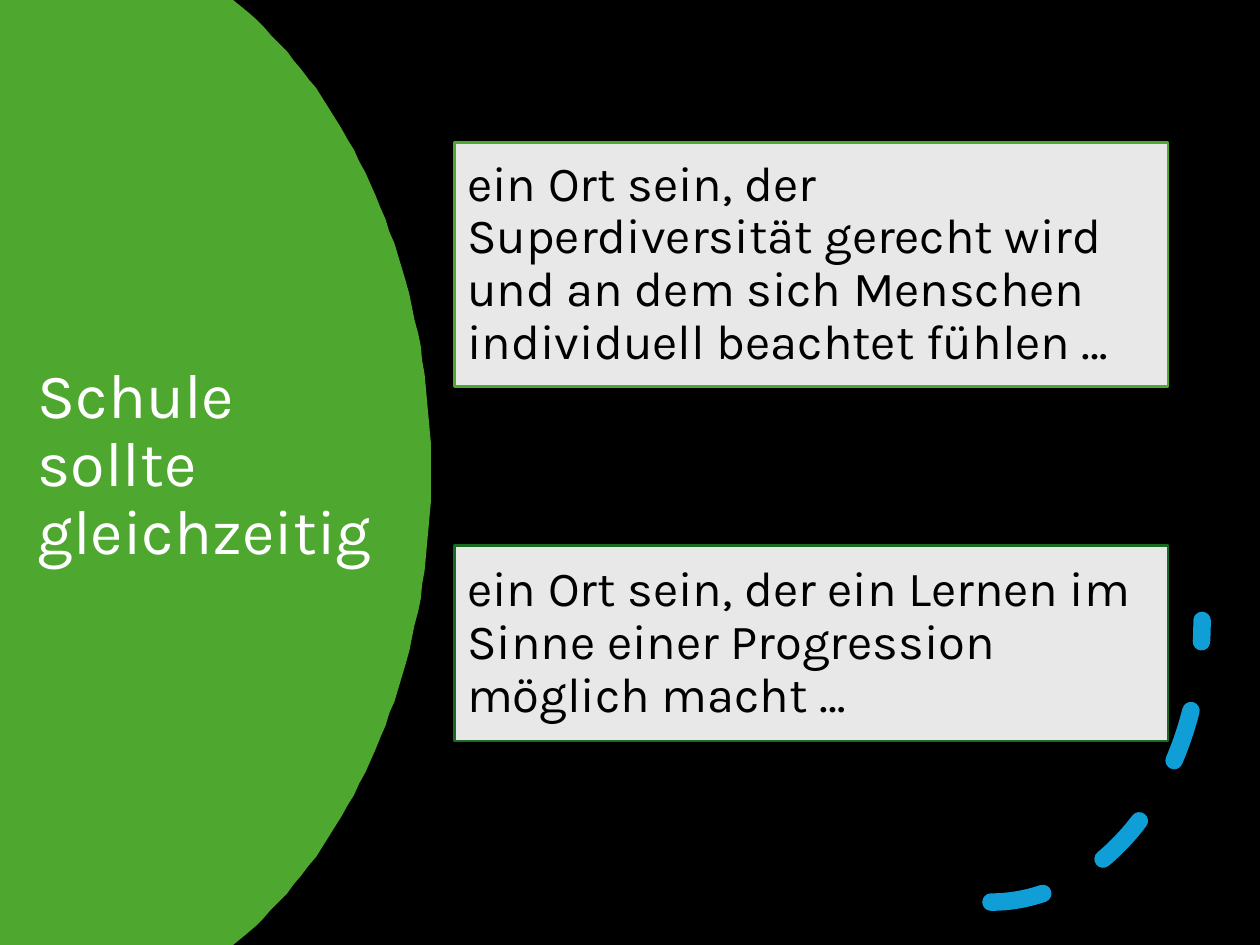
from dataclasses import dataclass

from lxml import etree
from pptx import Presentation
from pptx.dml.color import RGBColor
from pptx.enum.dml import MSO_LINE
from pptx.enum.shapes import MSO_SHAPE
from pptx.enum.text import MSO_ANCHOR, PP_ALIGN
from pptx.util import Pt

RECT, ARC = MSO_SHAPE.RECTANGLE, MSO_SHAPE.ARC
MIDDLE, LEFT, DASH = MSO_ANCHOR.MIDDLE, PP_ALIGN.LEFT, MSO_LINE.DASH

PX = 9144  # 100 px to the inch
FONT = "Karla"
COLORS = {
    "black": "000000",
    "white": "FFFFFF",
    "green": "4EA72E",
    "dark_green": "196B24",
    "gray": "E8E8E8",
    "blue": "0F9ED5",
}


@dataclass
class Card:
    top: int
    height: int
    border: str
    text: str


CARDS = [
    Card(113, 194, "green",
         "ein Ort sein, der Superdiversität gerecht wird und an dem sich "
         "Menschen individuell beachtet fühlen …"),
    Card(433, 155, "dark_green",
         "ein Ort sein, der ein Lernen im Sinne einer Progression möglich macht …"),
]

Point = tuple[float, float]


def px(*values: int) -> list[int]:
    return [v * PX for v in values]


def rgb(name: str) -> RGBColor:
    return RGBColor.from_string(COLORS[name])


def paint(fill, color: str) -> None:
    fill.solid()
    fill.fore_color.rgb = rgb(color)


def bezier(p0: Point, p1: Point, p2: Point, p3: Point, steps: int = 40) -> list[Point]:
    """Points along a cubic curve, without its start."""
    points = []
    for i in range(1, steps + 1):
        t = i / steps
        u = 1 - t
        weights = (u**3, 3 * u * u * t, 3 * u * t * t, t**3)
        points.append(tuple(sum(w * p[axis] for w, p in zip(weights, (p0, p1, p2, p3)))
                            for axis in (0, 1)))
    return points


def add_green_bulge(slide) -> None:
    upper = [(0, 0), (185, 0), (196, 9)]
    upper += bezier((196, 9), (284, 88), (342, 223), (342, 375))
    lower = [(x, 750 - y) for x, y in reversed(upper[:-1])]
    builder = slide.shapes.build_freeform(0, 0, scale=PX)
    builder.add_line_segments(upper[1:] + lower, close=True)
    sp = builder.convert_to_shape()
    sp.shadow.inherit = False
    paint(sp.fill, "green")
    sp.line.fill.background()


def add_dashed_arc(slide) -> None:
    sp = slide.shapes.add_shape(ARC, *px(619, 269, 335, 447))
    sp.shadow.inherit = False
    sp.fill.background()
    paint(sp.line.fill, "blue")
    sp.line.width = Pt(10)
    sp.line.dash_style = DASH
    ln = sp.line.fill._xPr
    ln.set("cap", "rnd")
    etree.SubElement(ln, ln.tag.replace("}ln", "}round"))
    sp._element.spPr.xfrm.set("flipV", "1")


def write(sp, text: str, size: int, color: str) -> None:
    tf = sp.text_frame
    tf.word_wrap = True
    tf.vertical_anchor = MIDDLE
    p = tf.paragraphs[0]
    p.alignment = LEFT
    p.line_spacing = 0.9
    r = p.add_run()
    r.text = text
    r.font.name = FONT
    r.font.size = Pt(size)
    r.font.color.rgb = rgb(color)


def add_card(slide, card: Card) -> None:
    sp = slide.shapes.add_shape(RECT, *px(361, card.top, 566, card.height))
    sp.shadow.inherit = False
    paint(sp.fill, "gray")
    paint(sp.line.fill, card.border)
    sp.line.width = Pt(1.5)
    write(sp, card.text, 28, "black")


def main() -> None:
    prs = Presentation()
    prs.slide_width, prs.slide_height = px(1000, 750)
    slide = prs.slides.add_slide(prs.slide_layouts[6])
    paint(slide.background.fill, "black")
    add_green_bulge(slide)
    title = slide.shapes.add_textbox(*px(20, 126, 299, 488))
    write(title, "Schule sollte gleichzeitig", 36, "white")
    add_dashed_arc(slide)
    for card in CARDS:
        add_card(slide, card)
    prs.save("out.pptx")


if __name__ == "__main__":
    main()
